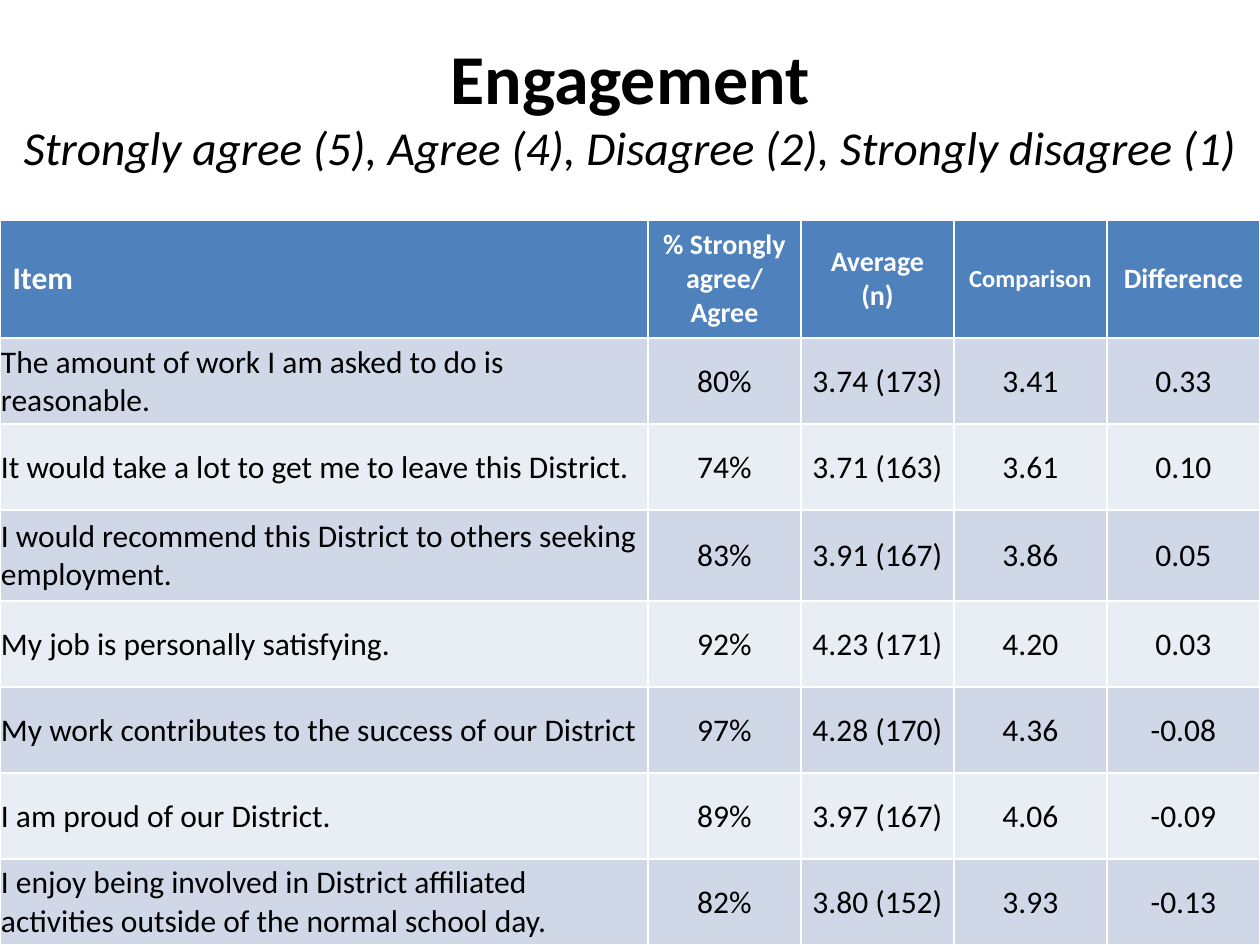
from pptx import Presentation
from pptx.dml.color import RGBColor
from pptx.enum.text import MSO_ANCHOR, MSO_AUTO_SIZE, PP_ALIGN
from pptx.util import Emu, Pt


def px(n):
    return Emu(round(n * 914400 / 126))


def add_run(p, text, size, color, bold=False, italic=False):
    r = p.add_run()
    r.text = text
    r.font.color.rgb = RGBColor.from_string(color)
    style = {"name": "Calibri", "size": Pt(size), "bold": bold, "italic": italic}
    for name, value in style.items():
        setattr(r.font, name, value)


prs = Presentation()
prs.slide_width, prs.slide_height = px(1260), px(945)
s = prs.slides.add_slide(prs.slide_layouts[5])

# Title with the rating scale below it
title = s.shapes.title
title.left, title.top, title.width, title.height = px(0), px(0), px(1260), px(210)
tf = title.text_frame
tf.auto_size = MSO_AUTO_SIZE.NONE
tf.word_wrap = True
tf.vertical_anchor = MSO_ANCHOR.MIDDLE
p = tf.paragraphs[0]
p.alignment = PP_ALIGN.CENTER
add_run(p, "Engagement", 40, "000000", bold=True)
p.add_line_break()
add_run(p, "Strongly agree (5), Agree (4), Disagree (2), Strongly disagree (1)",
        27, "000000", italic=True)

# Survey results
rows = [
    ("Item", "% Strongly agree/ Agree", "Average (n)", "Comparison", "Difference"),
    ("The amount of work I am asked to do is reasonable.",
     "80%", "3.74 (173)", "3.41", "0.33"),
    ("It would take a lot to get me to leave this District.",
     "74%", "3.71 (163)", "3.61", "0.10"),
    ("I would recommend this District to others seeking employment.",
     "83%", "3.91 (167)", "3.86", "0.05"),
    ("My job is personally satisfying.", "92%", "4.23 (171)", "4.20", "0.03"),
    ("My work contributes to the success of our District",
     "97%", "4.28 (170)", "4.36", "-0.08"),
    ("I am proud of our District.", "89%", "3.97 (167)", "4.06", "-0.09"),
    ("I enjoy being involved in District affiliated activities outside of "
     "the normal school day.", "82%", "3.80 (152)", "3.93", "-0.13"),
]
col_widths = [648] + [153] * 4
row_heights = [118, 86, 86, 91, 86, 86, 86, 86]
header_sizes = [18, 16, 16, 14, 16]
body_margins = {"margin_left": 1, "margin_right": 1, "margin_top": 1, "margin_bottom": 0}

# The default table style supplies the white rules between cells
table = s.shapes.add_table(len(rows), len(col_widths), px(0), px(220),
                           px(sum(col_widths)), px(sum(row_heights))).table
for column, width in zip(table.columns, col_widths):
    column.width = px(width)
for row, height in zip(table.rows, row_heights):
    row.height = px(height)

for i, texts in enumerate(rows):
    header = i == 0
    fill = "4F81BD" if header else ("E9EDF4", "D0D8E8")[i % 2]
    for j, text in enumerate(texts):
        cell = table.cell(i, j)
        cell.fill.solid()
        cell.fill.fore_color.rgb = RGBColor.from_string(fill)
        cell.vertical_anchor = MSO_ANCHOR.MIDDLE
        if not header:
            for side, margin in body_margins.items():
                setattr(cell, side, px(margin))
        p = cell.text_frame.paragraphs[0]
        p.alignment = PP_ALIGN.CENTER if j else PP_ALIGN.LEFT
        add_run(p, text, header_sizes[j] if header else 18,
                "FFFFFF" if header else "000000", bold=header)

prs.save("out.pptx")
